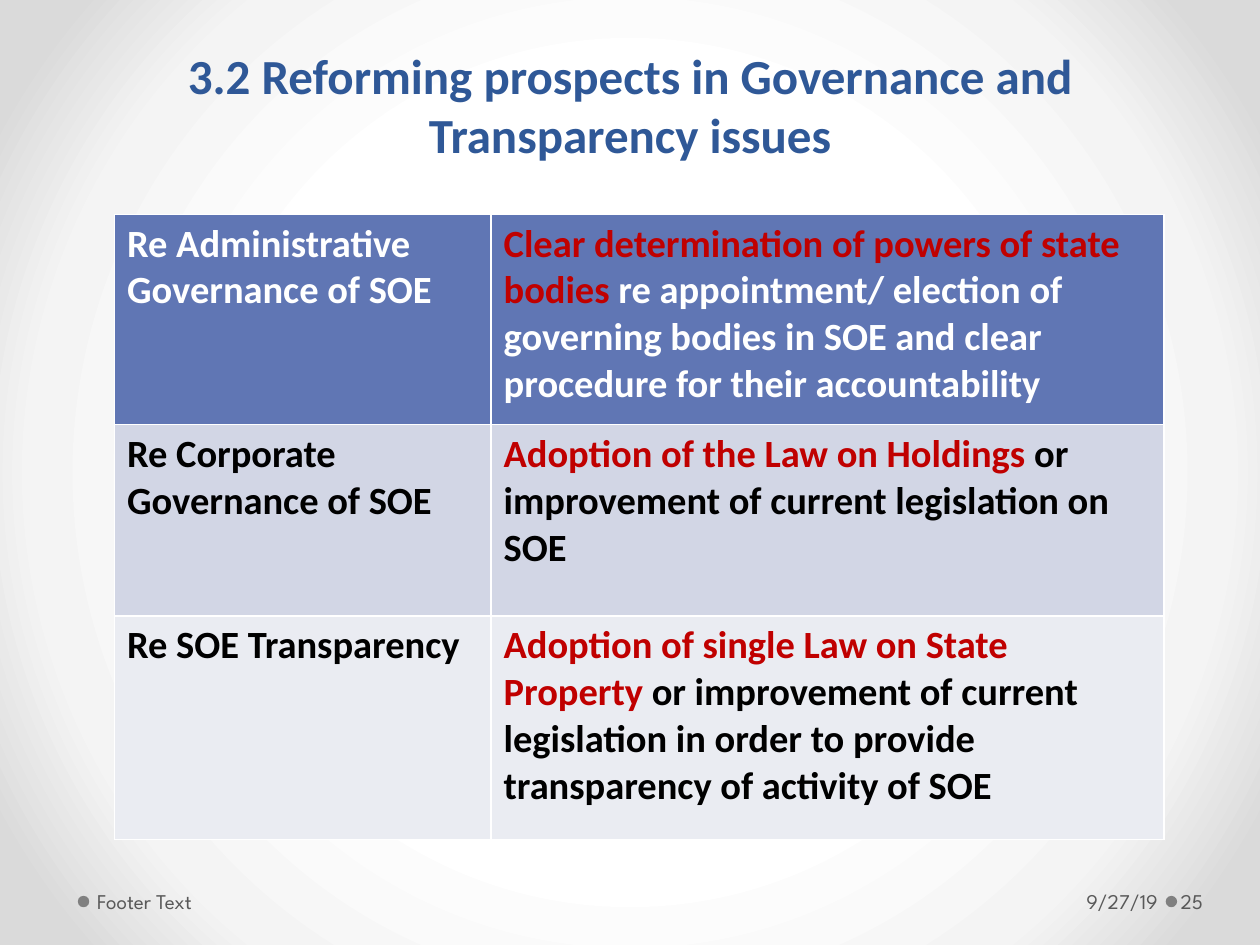
import pptx
import pptx.util
import pptx.dml.color
import pptx.enum.shapes
import pptx.enum.text
import pptx.oxml
import pptx.oxml.ns
from pptx.util import Cm

ALIGN = pptx.enum.text.PP_ALIGN
ANCHOR = pptx.enum.text.MSO_ANCHOR

TITLE = "3.2 Reforming prospects in Governance and Transparency issues"
# topic, highlighted start, remainder, text colour, fill colour, row height in cm
ROWS = [
    ("Re Administrative Governance of SOE",
     "Clear determination of powers of state bodies",
     " re appointment/ election of governing bodies in SOE and clear "
     "procedure for their accountability", "FFFFFF", "6076B4", 4.24),
    ("Re Corporate Governance of SOE",
     "Adoption of the Law on Holdings ",
     "or improvement of current legislation on SOE",
     "000000", "D2D6E5", 3.86),
    ("Re SOE Transparency",
     "Adoption of single Law on State Property ",
     "or improvement of current legislation in order to provide "
     "transparency of activity of SOE", "000000", "EAECF2", 4.5),
]
COLUMNS = [7.59, 13.56]
HIGHLIGHT = "C00000"
# text, left, width, left inset, right inset (cm), alignment
FOOTERS = [
    ("9/27/19", 17.68, 5.79, 0.25, 0.13, ALIGN.RIGHT),
    ("Footer Text", 1.83, 7.9, 0.13, 0.25, ALIGN.LEFT),
    ("25", 23.72, 1.55, 0.08, 0.13, ALIGN.LEFT),
]
DOTS = [23.5, 1.57]
BACKGROUND = [(50, "FFFFFF"), (76, "F4F4F4"), (92, "DADADA")]


def rgb(value):
    return pptx.dml.color.RGBColor.from_string(value)


def set_font(font, name, size, color=None, bold=False):
    font.name, font.size, font.bold = name, pptx.util.Pt(size), bold
    if color:
        font.color.rgb = rgb(color)


def radial_background(s, stops):
    """Replace the background fill by a gradient spreading from the centre."""
    s.background.fill.solid()
    bg = s.element.find(".//" + pptx.oxml.ns.qn("p:bgPr"))
    gs = "".join(f'<a:gs pos="{pos * 1000}"><a:srgbClr val="{color}"/></a:gs>'
                 for pos, color in stops)
    gradient = pptx.oxml.parse_xml(
        f'<a:gradFill {pptx.oxml.ns.nsdecls("a")} rotWithShape="1">'
        f'<a:gsLst>{gs}</a:gsLst><a:path path="circle">'
        '<a:fillToRect l="50000" t="50000" r="50000" b="50000"/>'
        '</a:path></a:gradFill>')
    bg.replace(bg[0], gradient)


def add_title(s):
    sp = s.shapes.title
    sp.left, sp.top, sp.width, sp.height = Cm(1.27), Cm(0.91), Cm(22.86), Cm(2.39)
    tf = sp.text_frame
    tf.text = TITLE
    tf.auto_size = pptx.enum.text.MSO_AUTO_SIZE.NONE
    tf.vertical_anchor = ANCHOR.BOTTOM
    tf.margin_top = tf.margin_bottom = 0
    p = tf.paragraphs[0]
    p.alignment = ALIGN.CENTER
    set_font(p.font, "Calibri", 28, "2F5897", True)


def add_table(s):
    height = sum(row[-1] for row in ROWS)
    table = s.shapes.add_table(len(ROWS), len(COLUMNS), Cm(2.31), Cm(4.32),
                               Cm(sum(COLUMNS)), Cm(height)).table
    for column, width in zip(table.columns, COLUMNS):
        column.width = Cm(width)
    for i, (topic, lead, rest, color, fill, row_height) in enumerate(ROWS):
        table.rows[i].height = Cm(row_height)
        contents = [[(topic, color)], [(lead, HIGHLIGHT), (rest, color)]]
        for j, runs in enumerate(contents):
            cell = table.cell(i, j)
            cell.fill.solid()
            cell.fill.fore_color.rgb = rgb(fill)
            p = cell.text_frame.paragraphs[0]
            set_font(p.font, "Calibri", 22, bold=True)
            for text, run_color in runs:
                r = p.add_run()
                r.text = text
                r.font.color.rgb = rgb(run_color)


def add_footer(s):
    for left in DOTS:
        dot = s.shapes.add_shape(pptx.enum.shapes.MSO_SHAPE.OVAL,
                                 Cm(left), Cm(18.06), Cm(0.23), Cm(0.23))
        dot.shadow.inherit = False
        dot.fill.solid()
        dot.fill.fore_color.rgb = rgb("808080")
        dot.line.fill.background()
    for text, left, width, inset_left, inset_right, align in FOOTERS:
        tf = s.shapes.add_textbox(Cm(left), Cm(17.65), Cm(width), Cm(1.02)).text_frame
        tf.word_wrap = True
        tf.vertical_anchor = ANCHOR.MIDDLE
        tf.margin_left, tf.margin_right = Cm(inset_left), Cm(inset_right)
        p = tf.paragraphs[0]
        p.text, p.alignment = text, align
        set_font(p.font, "League Spartan", 12, "595959")


def main():
    prs = pptx.Presentation()
    prs.slide_width, prs.slide_height = Cm(25.4), Cm(19.05)
    s = prs.slides.add_slide(prs.slide_layouts[5])
    radial_background(s, BACKGROUND)
    add_title(s)
    add_footer(s)
    add_table(s)
    prs.save("out.pptx")


if __name__ == "__main__":
    main()
